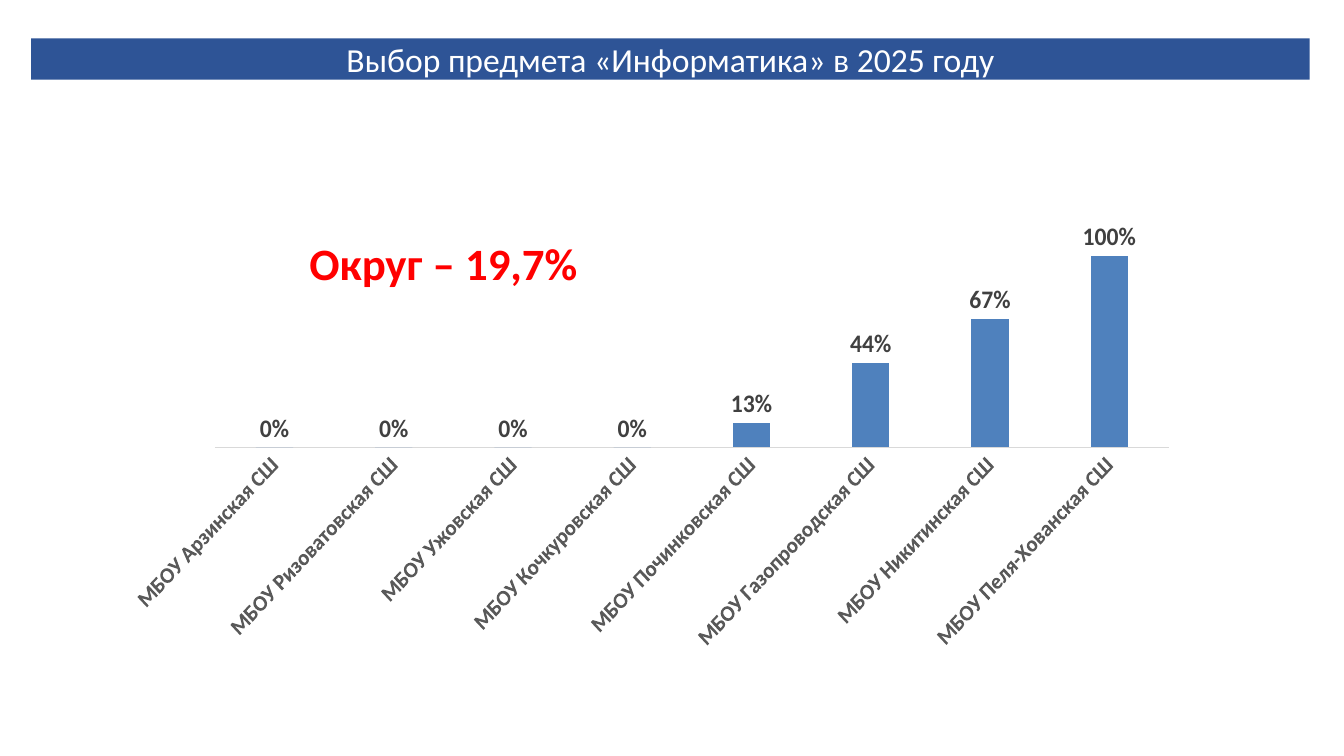
"""Build the slide on the choice of informatics by school."""
from lxml.etree import SubElement
from pptx import Presentation
from pptx.chart.data import CategoryChartData
from pptx.dml.color import RGBColor
from pptx.enum.chart import XL_CHART_TYPE, XL_LABEL_POSITION, XL_TICK_MARK
from pptx.enum.text import MSO_ANCHOR, PP_ALIGN
from pptx.oxml.ns import qn
from pptx.util import Inches, Pt

TITLE = "Выбор предмета «Информатика» в 2025 году"
TOTAL = "Округ – 19,7%"
SCHOOLS = {
    "Арзинская": 0, "Ризоватовская": 0, "Ужовская": 0, "Кочкуровская": 0,
    "Починковская": 0.13, "Газопроводская": 0.44, "Никитинская": 0.67,
    "Пеля-Хованская": 1,
}
BOXES = {
    "title": (0.31, 0.38, 12.68, 0.41),
    "total": (2.97, 2.29, 3.23, 0.64),
    "chart": (1.31, 1.7, 10.47, 5.2),
}
PLOT = {"layoutTarget": "inner", "xMode": "edge", "yMode": "edge",
        "x": 0.018, "y": 0.088, "w": 0.963, "h": 0.439}
FONTS = {
    "title": (24, "FFFFFF", False),
    "total": (32, "FF0000", True),
    "chart": (10, "000000", False),
    "axis": (16, "595959", True),
    "label": (18, "404040", True),
}


def color(code):
    return RGBColor.from_string(code)


def assign(item, values):
    for name, value in values.items():
        setattr(item, name, value)


def style(font, key):
    size, code, bold = FONTS[key]
    assign(font, {"name": "Calibri", "size": Pt(size), "bold": bold})
    font.color.rgb = color(code)


def place(key):
    return [Inches(n) for n in BOXES[key]]


def write(shape, key, text, frame, para):
    assign(shape.text_frame, frame)
    line = shape.text_frame.paragraphs[0]
    assign(line, para)
    run = line.add_run()
    run.text = text
    style(run.font, key)


def add_title(slide):
    title = slide.shapes.title
    assign(title, dict(zip(("left", "top", "width", "height"), place("title"))))
    title.fill.solid()
    title.fill.fore_color.rgb = color("2E5496")
    write(title, "title", TITLE,
          {"vertical_anchor": MSO_ANCHOR.MIDDLE, "margin_left": 0,
           "margin_right": 0, "margin_top": Inches(0.04), "margin_bottom": 0},
          {"alignment": PP_ALIGN.CENTER, "line_spacing": Pt(25.9),
           "space_before": Pt(3.2)})


def add_chart(slide):
    data = CategoryChartData(number_format="0%")
    data.categories = [f"МБОУ {name} СШ" for name in SCHOOLS]
    data.add_series("Выбор", SCHOOLS.values())
    chart = slide.shapes.add_chart(
        XL_CHART_TYPE.COLUMN_CLUSTERED, *place("chart"), data).chart
    assign(chart, {"has_legend": False, "has_title": False})
    style(chart.font, "chart")

    axis = chart.category_axis
    assign(axis, {"major_tick_mark": XL_TICK_MARK.NONE,
                  "minor_tick_mark": XL_TICK_MARK.NONE})
    axis.format.line.width = Pt(0.75)
    axis.format.line.color.rgb = color("D9D9D9")
    style(axis.tick_labels.font, "axis")
    body = axis._element.find(qn("c:txPr")).find(qn("a:bodyPr"))
    body.set("rot", "-60000000")
    body.set("vert", "horz")
    assign(chart.value_axis, {"visible": False, "has_major_gridlines": False,
                              "minimum_scale": 0, "maximum_scale": 1.2})

    plot = chart.plots[0]
    assign(plot, {"gap_width": 219, "overlap": -27, "vary_by_categories": False,
                  "has_data_labels": True})
    assign(plot.data_labels, {"show_value": True, "number_format": "0%",
                              "number_format_is_linked": False,
                              "position": XL_LABEL_POSITION.OUTSIDE_END})
    style(plot.data_labels.font, "label")
    fill = plot.series[0].format.fill
    fill.solid()
    fill.fore_color.rgb = color("4F81BD")

    area = chart._chartSpace.chart.plotArea
    layout = area.find(qn("c:layout"))
    if layout is None:
        layout = SubElement(area, qn("c:layout"))
        area.insert(0, layout)
    manual = SubElement(layout, qn("c:manualLayout"))
    for name, value in PLOT.items():
        SubElement(manual, qn(f"c:{name}")).set("val", str(value))


def main():
    deck = Presentation()
    assign(deck, {"slide_width": Inches(13.33), "slide_height": Inches(7.5)})
    slide = deck.slides.add_slide(deck.slide_layouts[5])
    add_title(slide)
    add_chart(slide)
    total = slide.shapes.add_textbox(*place("total"))
    write(total, "total", TOTAL, {"word_wrap": True}, {})
    deck.save("out.pptx")


if __name__ == "__main__":
    main()
